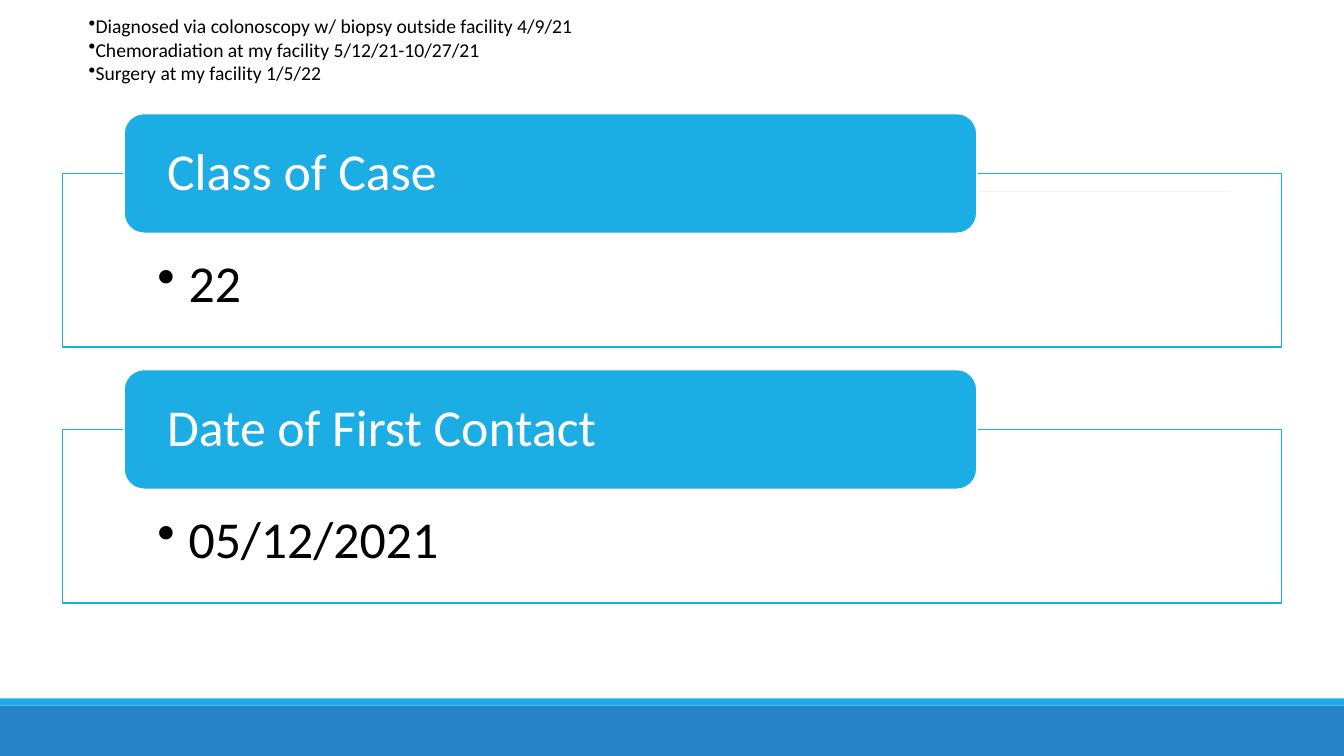
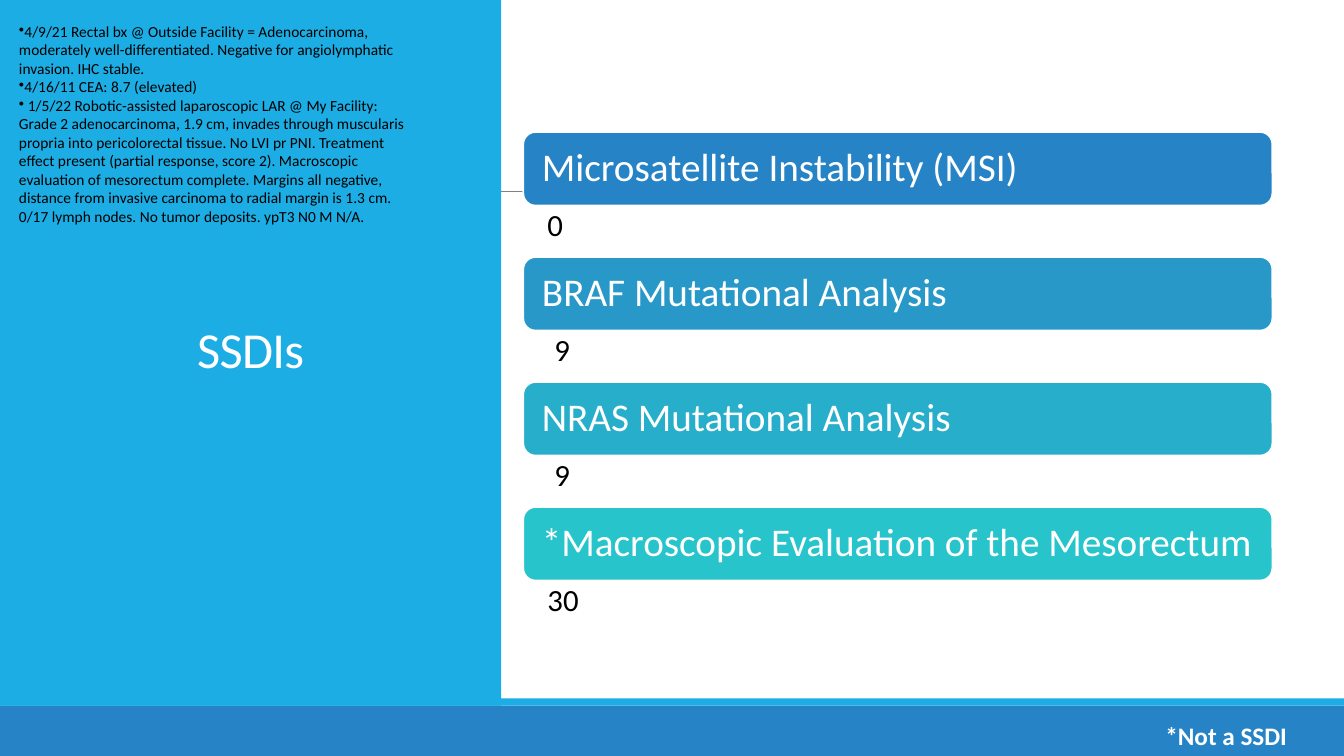
import pptx
import pptx.util
import pptx.dml.color
import pptx.enum.shapes
import pptx.enum.text
import pptx.oxml
import pptx.oxml.ns
from lxml import etree

Inches, Pt = pptx.util.Inches, pptx.util.Pt
RGBColor = pptx.dml.color.RGBColor
SHAPES = pptx.enum.shapes.MSO_SHAPE
ANCHOR = pptx.enum.text.MSO_ANCHOR
ALIGN = pptx.enum.text.PP_ALIGN
qn = pptx.oxml.ns.qn

# Content
CASE_HISTORY = [
    "Diagnosed via colonoscopy w/ biopsy outside facility 4/9/21",
    "Chemoradiation at my facility 5/12/21-10/27/21",
    "Surgery at my facility 1/5/22",
]
CASE_FIELDS = [("Class of Case", "22"), ("Date of First Contact", "05/12/2021")]
PATHOLOGY = [
    "4/9/21 Rectal bx @ Outside Facility = Adenocarcinoma, moderately "
    "well-differentiated. Negative for angiolymphatic invasion. IHC stable.",
    "4/16/11 CEA: 8.7 (elevated)",
    " 1/5/22 Robotic-assisted laparoscopic LAR @ My Facility: Grade 2 "
    "adenocarcinoma, 1.9 cm, invades through muscularis propria into "
    "pericolorectal tissue. No LVI pr PNI. Treatment effect present (partial "
    "response, score 2). Macroscopic evaluation of mesorectum complete. Margins "
    "all negative, distance from invasive carcinoma to radial margin is 1.3 cm. "
    "0/17 lymph nodes. No tumor deposits. ypT3 N0 M N/A.",
]
SIDE_TITLE = "SSDIs"
FOOTNOTE = "*Not a SSDI"

# Colours
WHITE = RGBColor(0xFF, 0xFF, 0xFF)
BLACK = RGBColor(0x00, 0x00, 0x00)
GRAY = RGBColor(0x80, 0x80, 0x80)
SKY = RGBColor(0x1C, 0xAD, 0xE4)
BLUE = RGBColor(0x26, 0x83, 0xC6)
STEEL = RGBColor(0x27, 0x98, 0xC8)
LAGOON = RGBColor(0x27, 0xAE, 0xCA)
TEAL = RGBColor(0x28, 0xC4, 0xCC)

SSDI_FIELDS = [
    ("Microsatellite Instability (MSI)", "0", BLUE),
    ("BRAF Mutational Analysis", " 9", STEEL),
    ("NRAS Mutational Analysis", " 9", LAGOON),
    ("*Macroscopic Evaluation of the Mesorectum", "30", TEAL),
]

# Shared measures, in inches
WIDTH, HEIGHT = 13.33, 7.5
FOOTER_TOP, STRIPE = 7.0, 0.07
RULE_LEFT, RULE_RIGHT, RULE_TOP = 1.31, 12.21, 1.9
FONT = "Calibri"
BORDER = 1.25


def write(shape, lines, size, color, insets=(0.1, 0.05, 0.1, 0.05), anchor=ANCHOR.TOP,
          align=ALIGN.LEFT, spacing=1.0, bullet=False, hang=0, bold=False, tracking=0):
    """Fill a shape with one paragraph per line."""
    frame = shape.text_frame
    left, top, right, bottom = map(Inches, insets)
    frame_format = {"word_wrap": True, "vertical_anchor": anchor, "margin_left": left,
                    "margin_top": top, "margin_right": right, "margin_bottom": bottom}
    for name, value in frame_format.items():
        setattr(frame, name, value)
    for index, line in enumerate(lines):
        paragraph = frame.add_paragraph() if index else frame.paragraphs[0]
        properties = paragraph._p.get_or_add_pPr()
        if hang:
            properties.set("marL", str(Inches(hang)))
            properties.set("indent", str(-Inches(hang)))
        if bullet:
            etree.SubElement(properties, qn("a:buChar"), char="•")
        paragraph.alignment, paragraph.line_spacing = align, spacing
        run = paragraph.add_run()
        run.text = line
        for name, value in {"name": FONT, "size": Pt(size), "bold": bold}.items():
            setattr(run.font, name, value)
        run.font.color.rgb = color
        if tracking:
            run._r.get_or_add_rPr().set("spc", str(int(tracking * 100)))


def add_panel(slide, box, fill, kind=SHAPES.RECTANGLE, line=None, opacity=100):
    shape = slide.shapes.add_shape(kind, *map(Inches, box))
    shape.shadow.inherit = False
    shape.fill.solid()
    shape.fill.fore_color.rgb = fill
    if opacity < 100:
        color = shape.fill._xPr.find(".//" + qn("a:srgbClr"))
        etree.SubElement(color, qn("a:alpha"), val=str(opacity * 1000))
    if line is None:
        shape.line.fill.background()
    else:
        shape.line.color.rgb = line
        shape.line.width = Pt(BORDER)
    return shape


def add_text(slide, box, lines, size, color, **style):
    write(slide.shapes.add_textbox(*map(Inches, box)), lines, size, color, **style)


def add_header(slide, box, label, fill, size, inset):
    header = add_panel(slide, box, fill, SHAPES.ROUNDED_RECTANGLE, WHITE)
    write(header, [label], size, WHITE, insets=(inset, 0, inset, 0),
          anchor=ANCHOR.MIDDLE, spacing=0.9)


def add_base_slide(presentation):
    """A blank slide with the footer bands and the thin rule."""
    slide = presentation.slides.add_slide(presentation.slide_layouts[6])
    add_panel(slide, (0, FOOTER_TOP, WIDTH, HEIGHT - FOOTER_TOP), BLUE)
    add_panel(slide, (0, FOOTER_TOP - STRIPE, WIDTH, STRIPE), SKY)
    rule = slide.shapes.add_connector(
        pptx.enum.shapes.MSO_CONNECTOR.STRAIGHT,
        *map(Inches, (RULE_LEFT, RULE_TOP, RULE_RIGHT, RULE_TOP)))
    rule.line.color.rgb = GRAY
    rule.line.width = Pt(0.5)
    etree.SubElement(rule._element.spPr, qn("a:effectLst"))
    return slide


def build_case_slide(presentation):
    slide = add_base_slide(presentation)
    left, first_top, width, height, pitch = 0.62, 1.72, 12.09, 1.72, 2.54
    header_left, header_width, header_height = 1.23, 8.46, 1.19
    for row, (label, value) in enumerate(CASE_FIELDS):
        top = first_top + row * pitch
        body = add_panel(slide, (left, top, width, height), WHITE, line=SKY, opacity=90)
        write(body, [value], 37, BLACK, insets=(0.94, 0.84, 0.94, 0.29),
              spacing=0.9, bullet=True, hang=0.31)
        header_box = (header_left, top - header_height / 2, header_width, header_height)
        add_header(slide, header_box, label, SKY, 37, 0.37)
    add_text(slide, (0.78, 0.09, 10.91, 0.81), CASE_HISTORY, 14, BLACK, bullet=True)


def build_ssdi_slide(presentation):
    slide = add_base_slide(presentation)
    side = add_panel(slide, (0, 0, 4.97, FOOTER_TOP), SKY)
    write(side, [SIDE_TITLE], 36, WHITE, anchor=ANCHOR.MIDDLE, align=ALIGN.CENTER,
          spacing=0.85, tracking=-0.5)
    # Stacked headers, each with its value below
    left, first_top, width, header_height, value_height = 5.19, 1.31, 7.43, 0.73, 0.51
    for row, (label, value, fill) in enumerate(SSDI_FIELDS):
        top = first_top + row * (header_height + value_height)
        add_header(slide, (left, top, width, header_height), label, fill, 28, 0.15)
        add_text(slide, (left, top + header_height, width, value_height), [value], 22, BLACK,
                 insets=(0.24, 0.04, 0.22, 0.04), spacing=0.9, hang=0.25)
    add_text(slide, (0.09, 0.17, 4.17, 2.32), PATHOLOGY, 11, BLACK, bullet=True)
    add_text(slide, (11.46, 7.1, 1.66, 0.4), [FOOTNOTE], 18, WHITE, bold=True)


def main():
    presentation = pptx.Presentation()
    presentation.slide_width, presentation.slide_height = Inches(WIDTH), Inches(HEIGHT)
    build_case_slide(presentation)
    build_ssdi_slide(presentation)
    presentation.save("out.pptx")


if __name__ == "__main__":
    main()
